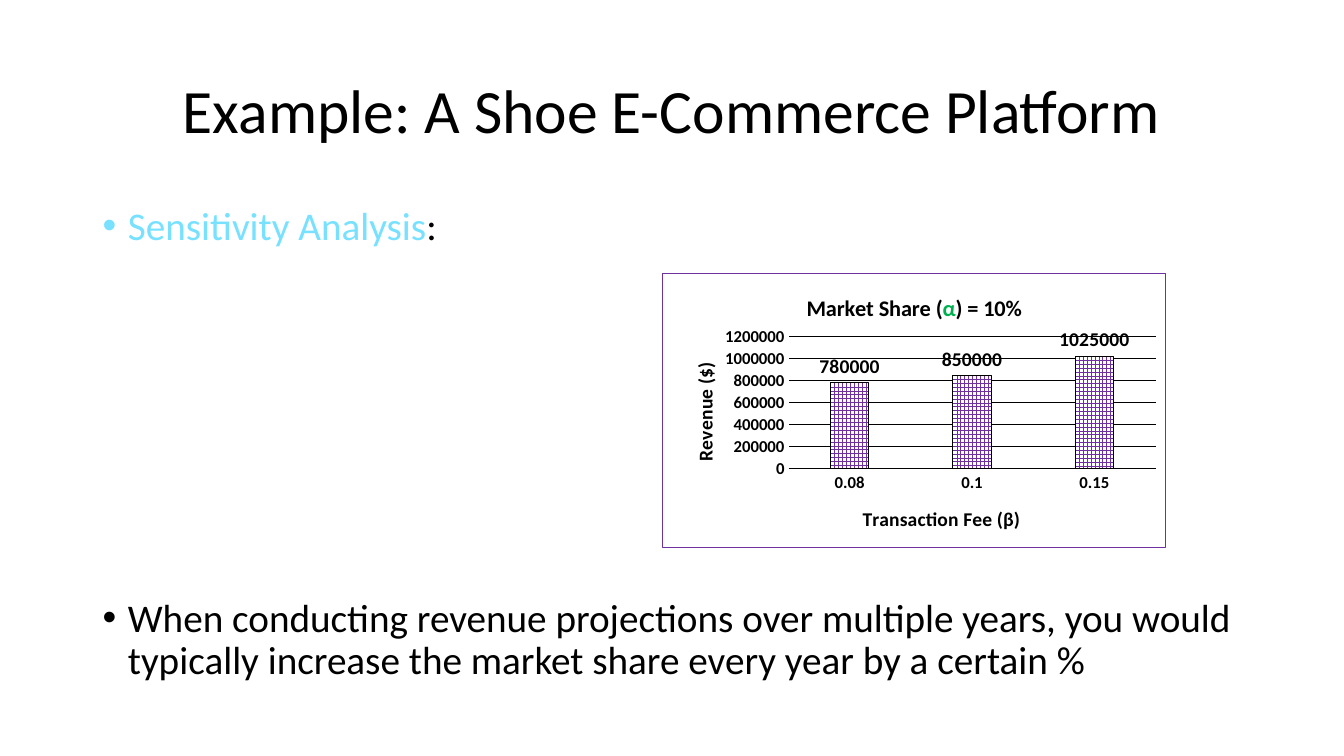
from lxml.etree import SubElement
from pptx import Presentation
from pptx.chart.data import CategoryChartData
from pptx.dml.color import RGBColor
from pptx.enum.chart import XL_CHART_TYPE as ChartType
from pptx.enum.chart import XL_LABEL_POSITION as LabelPosition
from pptx.enum.chart import XL_TICK_MARK as TickMark
from pptx.enum.dml import MSO_PATTERN as Pattern
from pptx.enum.text import MSO_ANCHOR as Anchor
from pptx.enum.text import MSO_AUTO_SIZE as AutoSize
from pptx.enum.text import PP_ALIGN as Align
from pptx.oxml import parse_xml
from pptx.oxml.ns import nsdecls, qn
from pptx.util import Cm, Pt

COLORS = {
    "text": "000000",
    "accent": "77E1FF",
    "alpha": "00B050",
    "purple": "7030A0",
    "white": "FFFFFF",
}
FONT = "Calibri"

TITLE = "Example: A Shoe E-Commerce Platform"
BULLETS = [
    ([("Sensitivity Analysis", "accent"), (":", "text")], 10),
    ([("When conducting revenue projections over multiple years, you would "
       "typically increase the market share every year by a certain %", "text")], 250),
]
CHART_TITLE = [("Market Share (", "text"), ("α", "alpha"), (") = 10%", "text")]
CATEGORY_TITLE = [("Transaction Fee (β)", "text")]
VALUE_TITLE = [("Revenue ($)", "text")]
REVENUE = {"0.08": 780000, "0.1": 850000, "0.15": 1025000}

TITLE_BOX = (Cm(2.33), Cm(1.01), Cm(29.21), Cm(3.68))
BODY_BOX = (Cm(2.33), Cm(5.07), Cm(29.21), Cm(13.3))
CHART_BOX = (Cm(16.69), Cm(6.89), Cm(12.7), Cm(6.93))


def color(name):
    return RGBColor.from_string(COLORS[name])


def format_font(font, size, name="text", bold=False):
    font.name = FONT
    font.size = Pt(size)
    font.bold = bold
    font.color.rgb = color(name)


def add_text(paragraph, runs, size, bold=False):
    for text, name in runs:
        run = paragraph.add_run()
        run.text = text
        format_font(run.font, size, name, bold)


def format_line(line, name):
    line.color.rgb = color(name)
    line.width = Pt(0.75)


def place(parent, index, left, top, size=None, inner=False):
    for old in parent.findall(qn("c:layout")):
        parent.remove(old)
    layout = parse_xml(f"<c:layout {nsdecls('c')}><c:manualLayout/></c:layout>")
    settings = [("layoutTarget", "inner")] if inner else []
    settings += [("xMode", "edge"), ("yMode", "edge"), ("x", left), ("y", top)]
    if size:
        settings += zip(("w", "h"), size)
    for tag, value in settings:
        SubElement(layout[0], qn(f"c:{tag}")).set("val", str(value))
    parent.insert(index, layout)


def add_chart_title(owner, runs, size, left, top):
    title = owner.chart_title if hasattr(owner, "chart_title") else owner.axis_title
    add_text(title.text_frame.paragraphs[0], runs, size, bold=True)
    place(title.format.line and title._element, 1, left, top)
    return title


def format_axis(axis):
    axis.major_tick_mark = TickMark.NONE
    axis.minor_tick_mark = TickMark.NONE
    format_font(axis.tick_labels.font, 12, bold=True)


def fill_placeholders(slide):
    title, body = slide.placeholders
    for shape, box in ((title, TITLE_BOX), (body, BODY_BOX)):
        shape.left, shape.top, shape.width, shape.height = box
        shape.text_frame.word_wrap = True
        shape.text_frame.auto_size = AutoSize.NONE

    title.text_frame.vertical_anchor = Anchor.MIDDLE
    heading = title.text_frame.paragraphs[0]
    heading.alignment = Align.CENTER
    heading.line_spacing = 0.9
    add_text(heading, [(TITLE, "text")], 44)

    for index, (runs, space) in enumerate(BULLETS):
        frame = body.text_frame
        paragraph = frame.add_paragraph() if index else frame.paragraphs[0]
        paragraph.line_spacing = 0.9
        paragraph.space_before = Pt(space)
        add_text(paragraph, runs, 28)
        properties = paragraph._p.get_or_add_pPr()
        properties.set("marL", str(Cm(0.64)))
        properties.set("indent", str(-Cm(0.64)))
        SubElement(properties, qn("a:buFont")).set("typeface", "Arial")
        SubElement(properties, qn("a:buChar")).set("char", "•")


def add_revenue_chart(slide):
    data = CategoryChartData()
    data.categories = list(REVENUE)
    data.add_series("Series 1", list(REVENUE.values()))
    chart = slide.shapes.add_chart(ChartType.COLUMN_CLUSTERED, *CHART_BOX, data).chart
    chart.has_legend = False
    format_font(chart.font, 10)

    add_chart_title(chart, CHART_TITLE, 16, 0.28, 0.06)
    category, value = chart.category_axis, chart.value_axis
    add_chart_title(category, CATEGORY_TITLE, 14, 0.39, 0.83)
    revenue_title = add_chart_title(value, VALUE_TITLE, 14, 0.05, 0.31)
    revenue_title.text_frame._txBody.bodyPr.set("rot", "-5400000")
    revenue_title.text_frame._txBody.bodyPr.set("vert", "horz")

    format_axis(category)
    format_line(category.format.line, "text")
    format_axis(value)
    value.format.line.fill.background()
    value.minimum_scale, value.maximum_scale, value.major_unit = 0, 1200000, 200000
    format_line(value.major_gridlines.format.line, "text")

    plot = chart.plots[0]
    plot.vary_by_categories = False
    plot.gap_width, plot.overlap = 219, -27
    series = plot.series[0]
    fill = series.format.fill
    fill.patterned()
    fill.pattern = Pattern.LARGE_GRID
    fill.fore_color.rgb = color("purple")
    fill.back_color.rgb = color("white")
    format_line(series.format.line, "text")
    labels = series.data_labels
    labels.show_value = True
    labels.position = LabelPosition.OUTSIDE_END
    format_font(labels.font, 14, bold=True)

    chart_part = chart.element.find(qn("c:chart"))
    place(chart_part.find(qn("c:plotArea")), 0, 0.25, 0.23, (0.73, 0.48), inner=True)
    chart_part.addnext(parse_xml(
        f"<c:spPr {nsdecls('c', 'a')}>"
        f"<a:solidFill><a:srgbClr val='{COLORS['white']}'/></a:solidFill>"
        f"<a:ln w='{Pt(0.75)}'><a:solidFill><a:srgbClr val='{COLORS['purple']}'/>"
        "</a:solidFill></a:ln></c:spPr>"))


def main():
    presentation = Presentation()
    presentation.slide_width = Cm(33.87)
    presentation.slide_height = Cm(19.05)
    slide = presentation.slides.add_slide(presentation.slide_layouts[1])
    fill_placeholders(slide)
    add_revenue_chart(slide)
    presentation.save("out.pptx")


if __name__ == "__main__":
    main()
